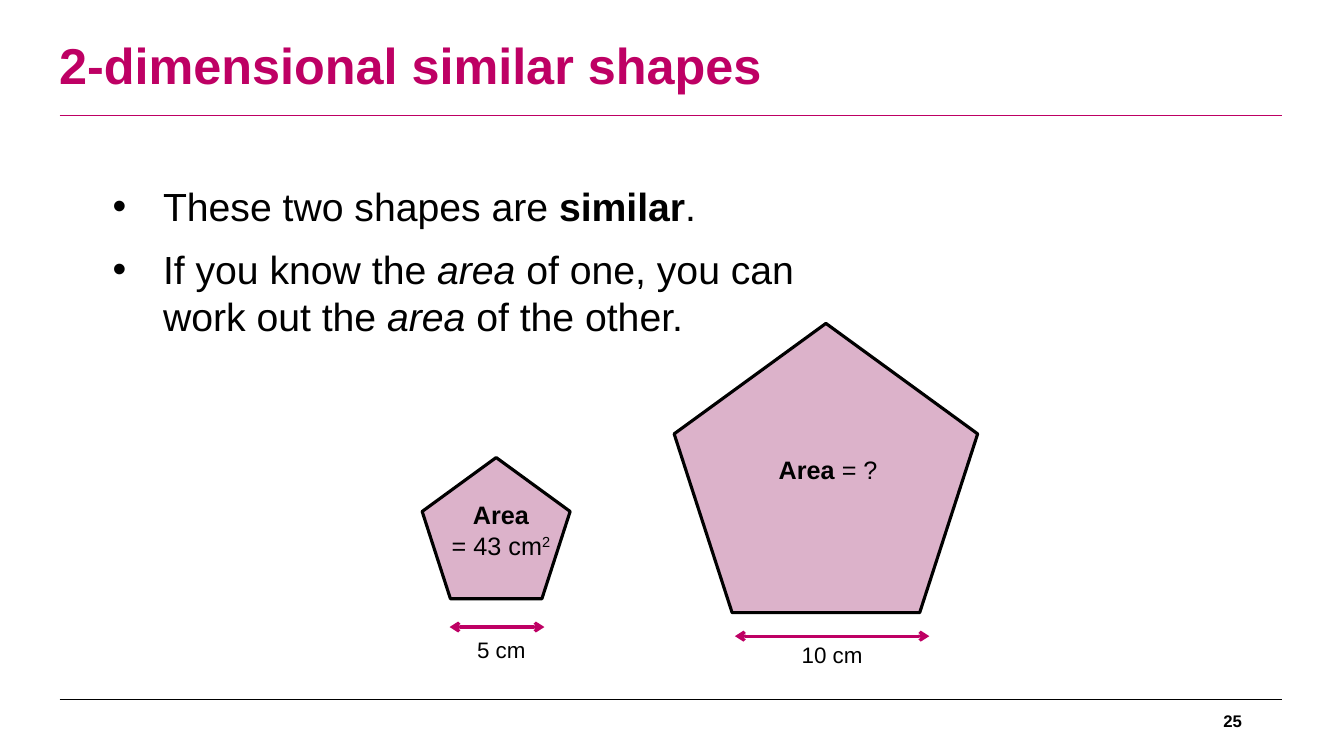
from lxml import etree
from pptx import Presentation
from pptx.dml.color import RGBColor
from pptx.enum.shapes import MSO_CONNECTOR, MSO_SHAPE
from pptx.enum.text import MSO_ANCHOR, MSO_AUTO_SIZE, PP_ALIGN
from pptx.oxml.ns import qn
from pptx.util import Cm, Pt

PENTAGON = MSO_SHAPE.REGULAR_PENTAGON
STRAIGHT = MSO_CONNECTOR.STRAIGHT
TOP, MIDDLE = MSO_ANCHOR.TOP, MSO_ANCHOR.MIDDLE
LEFT, CENTER, RIGHT = PP_ALIGN.LEFT, PP_ALIGN.CENTER, PP_ALIGN.RIGHT
NO_AUTOFIT, GROW = MSO_AUTO_SIZE.NONE, MSO_AUTO_SIZE.SHAPE_TO_FIT_TEXT

FONT = "Arial"
MAGENTA = RGBColor(0xBE, 0x00, 0x64)
PINK = RGBColor(0xDC, 0xB2, 0xCA)
BLACK = RGBColor(0x00, 0x00, 0x00)

# Text is a list of paragraphs; a paragraph is a list of (text, style) runs.
# Boxes are left, top, width, height in centimetres.
TITLE = [[("2-dimensional similar shapes", "bold")]]
PAGE_NUMBER = [[("25", "bold")]]
BULLETS = [
    ((2.59, 4.47, 18.24, 1.45),
     [[("These two shapes are ", ""), ("similar", "bold"), (".", "")]]),
    ((2.59, 6.05, 18.47, 2.64),
     [[("If you know the ", ""), ("area", "italic"),
       (" of one, you can work out the ", ""), ("area", "italic"),
       (" of the other.", "")]]),
]
PENTAGONS = [
    {"box": (10.64, 11.53, 3.73, 3.56),
     "area": [[("Area", "bold")], [("= 43 cm", ""), ("2", "superscript")]],
     "area_box": (11.1, 12.47, 3.05, 1.8),
     "arrow": (11.33, 13.72, 15.8),
     "side": "5 cm", "side_box": (11.76, 15.9, 1.75, 0.94)},
    {"box": (16.99, 8.15, 7.65, 7.29),
     "area": [[("Area ", "bold"), ("= ?", "")]],
     "area_box": (18.62, 11.33, 4.5, 1.02),
     "arrow": (18.52, 23.42, 16.03),
     "side": "10 cm", "side_box": (19.94, 16.03, 2.06, 0.94)},
]
RULE_LEFT, RULE_RIGHT = 1.5, 32.31
RULES = [(2.9, MAGENTA), (17.63, BLACK)]
BULLET_INDENT = 1.27


def add_text(slide, box, paragraphs, size, color=BLACK, align=LEFT,
             anchor=TOP, fit=GROW, wrap=True, spacing=None, bullet=False):
    frame = slide.shapes.add_textbox(*map(Cm, box)).text_frame
    frame.word_wrap = wrap
    frame.auto_size = fit
    frame.vertical_anchor = anchor
    for index, runs in enumerate(paragraphs):
        paragraph = frame.add_paragraph() if index else frame.paragraphs[0]
        paragraph.alignment = align
        if spacing:
            paragraph.line_spacing = spacing
        if bullet:
            add_bullet(paragraph)
        for text, style in runs:
            run = paragraph.add_run()
            run.text = text
            run.font.name = FONT
            run.font.size = Pt(size)
            run.font.color.rgb = color
            run.font.bold = style == "bold"
            run.font.italic = style == "italic"
            if style == "superscript":
                run.font._element.set("baseline", "30000")


def add_bullet(paragraph):
    properties = paragraph._p.get_or_add_pPr()
    properties.set("marL", str(Cm(BULLET_INDENT)))
    properties.set("indent", str(-Cm(BULLET_INDENT)))
    etree.SubElement(properties, qn("a:buFont")).set("typeface", FONT)
    etree.SubElement(properties, qn("a:buChar")).set("char", "•")


def add_horizontal_line(slide, left, right, y, color, width, arrows=False):
    line = slide.shapes.add_connector(
        STRAIGHT, Cm(left), Cm(y), Cm(right), Cm(y))
    line.line.color.rgb = color
    line.line.width = Pt(width)
    if arrows:
        for end in ("a:headEnd", "a:tailEnd"):
            etree.SubElement(line.line._ln, qn(end)).set("type", "arrow")
    etree.SubElement(line._element.spPr, qn("a:effectLst"))


def add_pentagon(slide, pentagon):
    """Draw a pentagon with its area and the arrow measuring its base."""
    shape = slide.shapes.add_shape(PENTAGON, *map(Cm, pentagon["box"]))
    shape.shadow.inherit = False
    shape.fill.solid()
    shape.fill.fore_color.rgb = PINK
    shape.line.color.rgb = BLACK
    shape.line.width = Pt(2.25)
    add_text(slide, pentagon["area_box"], pentagon["area"], 18, align=CENTER)
    add_text(slide, pentagon["side_box"], [[(pentagon["side"], "")]], 16,
             align=CENTER, wrap=False)
    left, right, y = pentagon["arrow"]
    add_horizontal_line(slide, left, right, y, MAGENTA, 2.25, arrows=True)


def main():
    presentation = Presentation()
    presentation.slide_width = Cm(33.87)
    presentation.slide_height = Cm(19.05)
    slide = presentation.slides.add_slide(presentation.slide_layouts[6])

    for y, color in RULES:
        add_horizontal_line(slide, RULE_LEFT, RULE_RIGHT, y, color, 0.75)
    add_text(slide, (1.24, 0.3, 25.4, 2.82), TITLE, 36, color=MAGENTA,
             anchor=MIDDLE, fit=NO_AUTOFIT, spacing=0.9)
    add_text(slide, (23.93, 17.65, 7.62, 1.02), PAGE_NUMBER, 12,
             align=RIGHT, anchor=MIDDLE, fit=NO_AUTOFIT)
    for pentagon in PENTAGONS:
        add_pentagon(slide, pentagon)
    for box, paragraphs in BULLETS:
        add_text(slide, box, paragraphs, 28, bullet=True)

    presentation.save("out.pptx")


if __name__ == "__main__":
    main()
